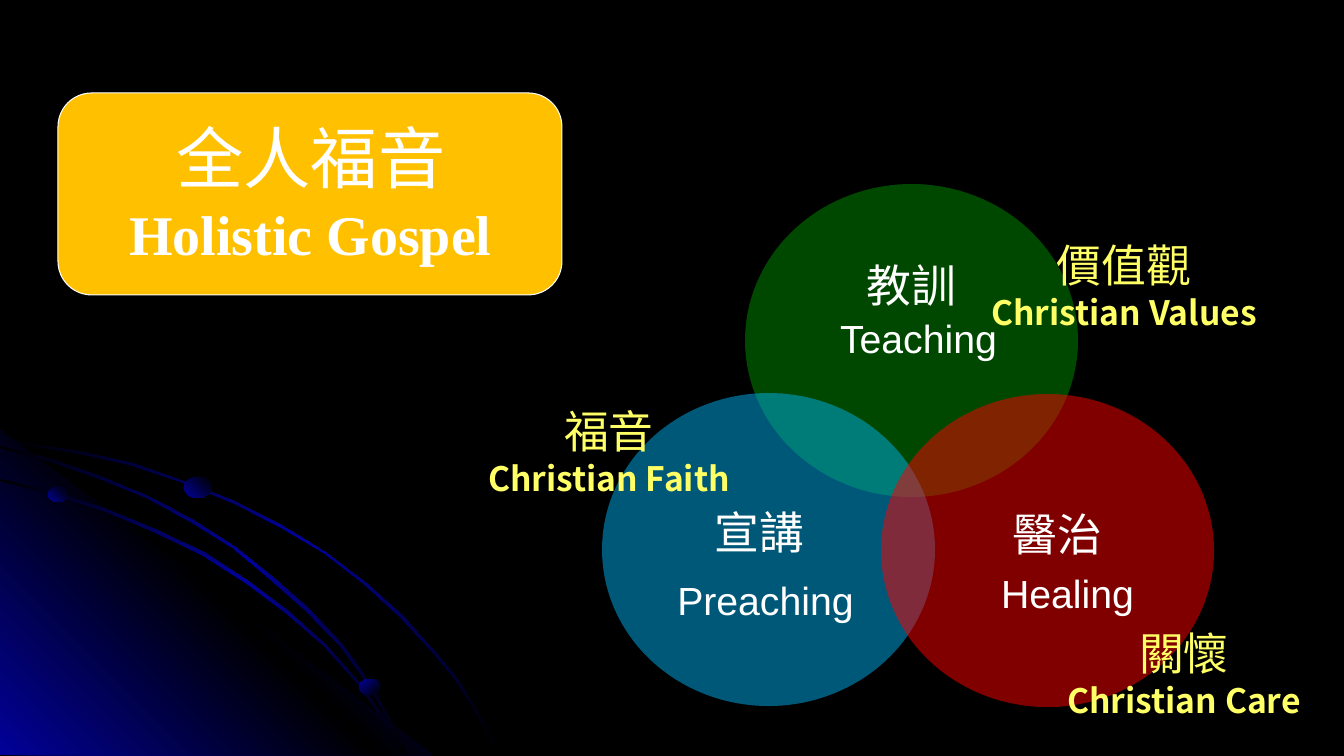
"""Build the Holistic Gospel slide: a title card and three overlapping ministry circles."""
import lxml.etree
import pptx
import pptx.dml.color
import pptx.enum.shapes
import pptx.enum.text
import pptx.oxml.ns
import pptx.util

PX = 9071
qn = pptx.oxml.ns.qn
SHAPE = pptx.enum.shapes.MSO_SHAPE
ANCHOR = pptx.enum.text.MSO_ANCHOR
SANS = "Noto Sans CJK SC"
WHITE, YELLOW, BLACK, NAVY = "FFFFFF", "FFFF66", "000000", "010199"


def paint(fill, color):
    """Give a fill one solid colour."""
    fill.solid()
    fill.fore_color.rgb = pptx.dml.color.RGBColor.from_string(color)


def write(label, box, lines, color, anchor=ANCHOR.TOP):
    """Place a label and write its centred lines of (text, size, font, bold)."""
    label.left, label.top, label.width, label.height = (n * PX for n in box)
    frame = label.text_frame
    frame.word_wrap = False
    frame.auto_size = pptx.enum.text.MSO_AUTO_SIZE.NONE
    frame.vertical_anchor = anchor
    for number, (text, size, face, bold) in enumerate(lines):
        paragraph = frame.add_paragraph() if number else frame.paragraphs[0]
        paragraph.alignment = pptx.enum.text.PP_ALIGN.CENTER
        run = paragraph.add_run()
        run.text = text
        look = {"size": pptx.util.Pt(size), "bold": bold, "name": face}
        for key, value in look.items():
            setattr(run.font, key, value)
        paint(run.font.fill, color)
        lxml.etree.SubElement(run._r.get_or_add_rPr(), qn("a:ea"), typeface=face)


deck = pptx.Presentation()
deck.slide_width, deck.slide_height = 1344 * PX, 756 * PX
slide = deck.slides.add_slide(deck.slide_layouts[5])
shapes = slide.shapes
paint(slide.background.fill, BLACK)

upper_strand = [
    (77, 451), (37, 445), (0, 438), (0, 442), (37, 447), (76, 453), (130, 465), (181, 482),
    (233, 503), (280, 527), (324, 553), (364, 584), (400, 617), (434, 654), (454, 678),
    (471, 704), (485, 729), (497, 755), (500, 755), (487, 729), (473, 704), (457, 678),
    (436, 653), (403, 616), (366, 583), (325, 552), (281, 525), (234, 501), (183, 481), (132, 463)]
corner = [(432, 755), (0, 755), (0, 430)]
lower_strand = [
    (383, 720), (395, 738), (404, 755), (407, 755), (397, 736), (385, 718), (358, 681),
    (326, 645), (288, 611), (248, 581), (205, 553), (157, 530), (106, 509), (54, 492),
    (0, 479), (0, 481), (51, 494), (104, 511), (154, 532), (202, 555), (246, 583),
    (286, 613), (324, 646), (356, 682)]
middle_strand = [
    (0, 446), (0, 448), (49, 461), (100, 479), (147, 498), (191, 522), (233, 548), (271, 580),
    (305, 610), (340, 646), (359, 672), (377, 700), (392, 728), (404, 755), (407, 755),
    (394, 726), (379, 699), (361, 670), (342, 644), (308, 608), (274, 578), (235, 547),
    (193, 520), (150, 497), (102, 477), (51, 459)]

strand_glow = [BLACK, NAVY, BLACK]
ornaments = []
for outline, glow, angle in [
        (upper_strand, strand_glow, 315), (corner, [NAVY, BLACK, NAVY], 45),
        (lower_strand, strand_glow, 315), (middle_strand, strand_glow, 315)]:
    builder = shapes.build_freeform(*outline[0], scale=PX)
    builder.add_line_segments(outline[1:], close=True)
    ornaments.append((builder.convert_to_shape(), glow, angle))
for bead, angle in [((48, 487, 20, 15), 45), ((359, 679, 21, 16), 315), ((184, 477, 28, 21), 45)]:
    sphere = shapes.add_shape(SHAPE.OVAL, *(n * PX for n in bead))
    ornaments.append((sphere, [NAVY, BLACK], angle))
for ornament, glow, angle in ornaments:
    ornament.shadow.inherit = False
    ornament.line.fill.background()
    ornament.fill.gradient()
    ornament.fill.gradient_angle = angle
    stops = ornament.element.spPr.find(".//" + qn("a:gsLst"))
    stops.clear()
    for number, color in enumerate(glow):
        position = 100000 * number // (len(glow) - 1)
        stop = lxml.etree.SubElement(stops, qn("a:gs"), pos=str(position))
        lxml.etree.SubElement(stop, qn("a:srgbClr"), val=color)

card = shapes.add_shape(SHAPE.ROUNDED_RECTANGLE, *(n * PX for n in (58, 93, 504, 202)))
card.shadow.inherit = False
paint(card.fill, "FFC000")
paint(card.line.fill, WHITE)
card.line.width = pptx.util.Pt(0.75)

ministries = [
    ((745, 184), "009900", 47, ("價值觀", "Christian Values", (1029, 243)),
     ("教訓", (856, 253)), ("Teaching", (829, 309, 179, 57))),
    ((602, 393), "00B0F0", 50, ("福音", "Christian Faith", (514, 409)),
     ("宣講", (704, 500)), ("Preaching", (666, 571, 199, 57))),
    ((881, 394), "FF0000", 50, ("關懷", "Christian Care", (1089, 631)),
     ("醫治", (1002, 502)), ("Healing", (990, 564, 155, 57)))]
for spot, color, opacity, (value, value_english, value_spot), (role, role_spot), (
        role_english, english_box) in ministries:
    circle = shapes.add_shape(SHAPE.OVAL, *(n * PX for n in (*spot, 333, 313)))
    circle.shadow.inherit = False
    circle.line.fill.background()
    paint(circle.fill, color)
    tint = circle.element.spPr.find(qn("a:solidFill"))[0]
    lxml.etree.SubElement(tint, qn("a:alpha"), val=str(opacity * 1000))
    for box, lines, ink, anchor in [
            ((*value_spot, 190, 84),
             [(value, 32, SANS, False), (value_english, 24, SANS, True)], YELLOW, ANCHOR.MIDDLE),
            ((*role_spot, 111, 65), [(role, 32, SANS, False)], WHITE, ANCHOR.TOP),
            (english_box, [(role_english, 28, "Arial", False)], WHITE, ANCHOR.TOP)]:
        write(shapes.add_textbox(0, 0, PX, PX), box, lines, ink, anchor)

title = shapes.title
card.element.addnext(title.element)
write(title, (165, 111, 292, 92), [("全人福音", 48, "Noto Sans CJK JP", False)], WHITE)
write(shapes.add_textbox(0, 0, PX, PX), (117, 195, 387, 78),
      [("Holistic Gospel", 40, "Times New Roman", True)], WHITE)

deck.save("out.pptx")
